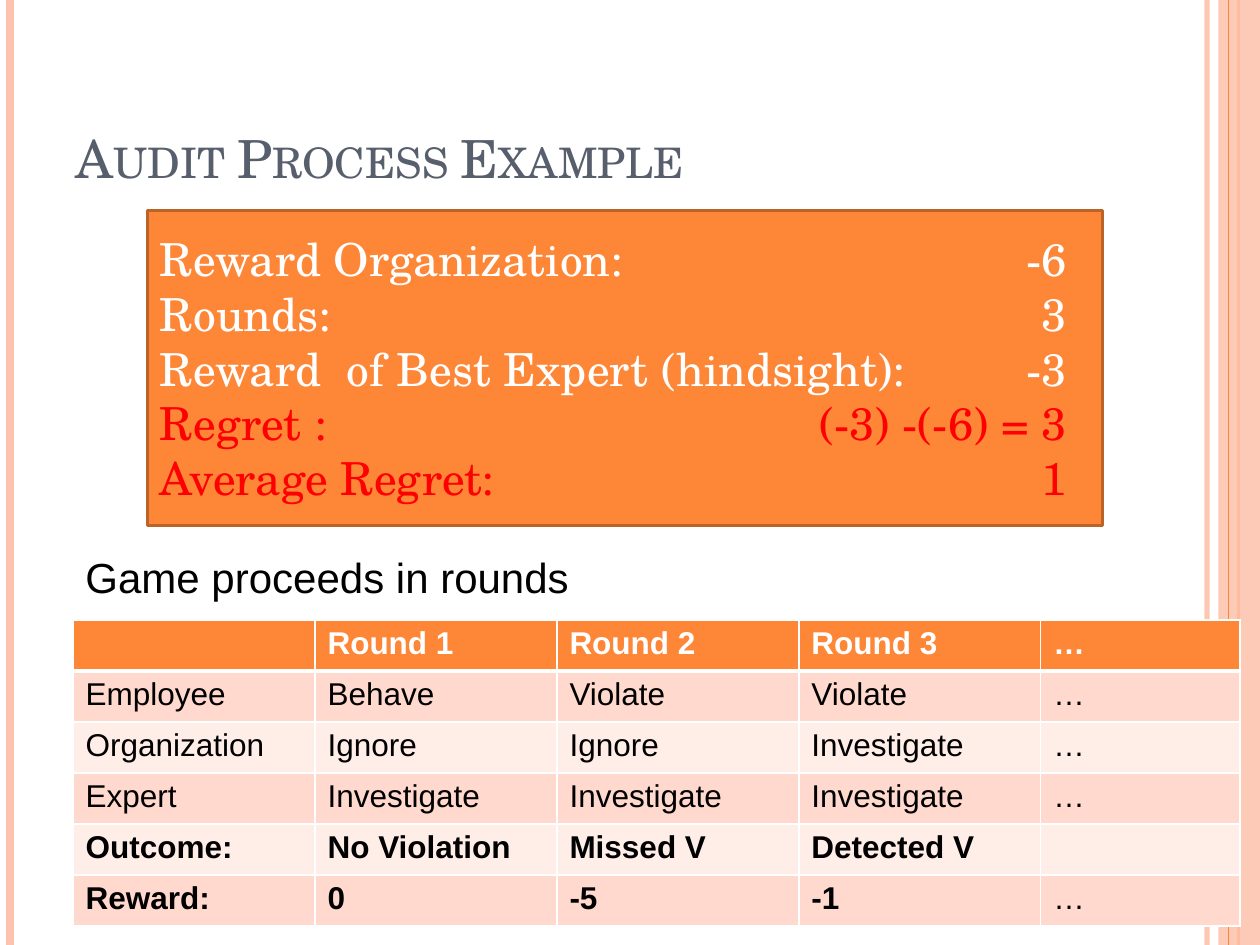
from lxml.etree import SubElement
from pptx import Presentation
from pptx.dml.color import RGBColor
from pptx.enum.shapes import MSO_CONNECTOR, MSO_SHAPE
from pptx.enum.text import MSO_ANCHOR, MSO_AUTO_SIZE, PP_ALIGN
from pptx.oxml.ns import qn
from pptx.util import Inches, Pt

ORANGE = RGBColor(0xFE, 0x86, 0x37)
DARK_ORANGE = RGBColor(0xBC, 0x63, 0x29)
PEACH = RGBColor(0xFE, 0xC3, 0xAE)
BAND_DARK = RGBColor(0xFF, 0xD9, 0xCE)
BAND_LIGHT = RGBColor(0xFF, 0xED, 0xE8)
SLATE = RGBColor(0x57, 0x5F, 0x6D)
WHITE = RGBColor(0xFF, 0xFF, 0xFF)
BLACK = RGBColor(0, 0, 0)
RED = RGBColor(0xFF, 0, 0)

SERIF, SANS = "TeX Gyre Schola", "Arial"

# x, colour, width in points, opacity in percent
RULES = [
    (9.58, PEACH, 3, 93),
    (0.08, PEACH, 4.5, 100),
    (9.83, ORANGE, 1.5, 100),
    (9.75, ORANGE, 0.75, 100),
]
SUMMARY = [
    ("Reward Organization:", "-6", WHITE),
    ("Rounds:", "3", WHITE),
    ("Reward  of Best Expert (hindsight):", "-3", WHITE),
    ("Regret :", "(-3) -(-6) = 3", RED),
    ("Average Regret:", "1", RED),
]
COLUMNS = [
    ["", "Employee", "Organization", "Expert", "Outcome:", "Reward:"],
    ["Round 1", "Behave", "Ignore", "Investigate", "No Violation", "0"],
    ["Round 2", "Violate", "Ignore", "Investigate", "Missed V", "-5"],
    ["Round 3", "Violate", "Investigate", "Investigate", "Detected V", "-1"],
    ["…", "…", "…", "…", "", "…"],
]
COLUMN_WIDTHS = [1.92, 1.92, 1.92, 1.92, 1.58]
BOLD_ROWS = (0, 4, 5)


def write(p, text, font=SANS, size=18, color=BLACK, bold=False, small_caps=False):
    r = p.add_run()
    r.text = text
    r.font.name, r.font.size, r.font.bold = font, Pt(size), bold
    r.font.color.rgb = color
    if small_caps:
        r.font._element.set("cap", "small")


def set_opacity(fill_parent, percent):
    color = fill_parent.find(qn("a:solidFill"))[0]
    SubElement(color, qn("a:alpha"), val=str(percent * 1000))


def set_borders(cell, **widths):
    """Draw white borders; widths in points are keyed L, R, T, B."""
    tc_pr = cell._tc.get_or_add_tcPr()
    for side, width in widths.items():
        ln = SubElement(tc_pr, qn(f"a:ln{side}"), w=str(Pt(width)))
        fill = SubElement(ln, qn("a:solidFill"))
        SubElement(fill, qn("a:srgbClr"), val=str(WHITE))


def add_right_tab(p, position):
    tabs = SubElement(p._p.get_or_add_pPr(), qn("a:tabLst"))
    SubElement(tabs, qn("a:tab"), pos=str(Inches(position)), algn="r")


class SlideBuilder:
    def __init__(self, prs):
        self.prs = prs
        self.s = prs.slides.add_slide(prs.slide_layouts[5])

    def rule(self, x, color, width, opacity):
        line = self.s.shapes.add_connector(
            MSO_CONNECTOR.STRAIGHT, Inches(x), 0, Inches(x), self.prs.slide_height)
        line.line.color.rgb = color
        line.line.width = Pt(width)
        SubElement(line._element.spPr, qn("a:effectLst"))
        if opacity < 100:
            set_opacity(line.line._get_or_add_ln(), opacity)

    def rectangle(self, x, y, w, h, fill, line=None, opacity=100):
        sp = self.s.shapes.add_shape(
            MSO_SHAPE.RECTANGLE, Inches(x), Inches(y), Inches(w), Inches(h))
        sp.shadow.inherit = False
        sp.fill.solid()
        sp.fill.fore_color.rgb = fill
        if line is None:
            sp.line.fill.background()
        else:
            sp.line.color.rgb = line
            sp.line.width = Pt(2)
        if opacity < 100:
            set_opacity(sp._element.spPr, opacity)
        return sp

    def title(self, text, x, y, w, h):
        sp = self.s.shapes.title
        sp.left, sp.top, sp.width, sp.height = map(Inches, (x, y, w, h))
        tf = sp.text_frame
        tf.auto_size = MSO_AUTO_SIZE.NONE
        tf.vertical_anchor = MSO_ANCHOR.BOTTOM
        p = tf.paragraphs[0]
        p.alignment = PP_ALIGN.LEFT
        write(p, text, font=SERIF, size=30, color=SLATE, small_caps=True)

    def text(self, text, x, y, w, h, **style):
        tf = self.s.shapes.add_textbox(
            Inches(x), Inches(y), Inches(w), Inches(h)).text_frame
        tf.word_wrap = True
        tf.auto_size = MSO_AUTO_SIZE.SHAPE_TO_FIT_TEXT
        write(tf.paragraphs[0], text, **style)

    def summary(self, rows, x, y, w, h):
        """Box of labels with values lined up at a right tab."""
        tf = self.rectangle(x, y, w, h, ORANGE, DARK_ORANGE).text_frame
        tf.word_wrap = True
        tf.vertical_anchor = MSO_ANCHOR.MIDDLE
        for i, (label, value, color) in enumerate(rows):
            p = tf.add_paragraph() if i else tf.paragraphs[0]
            p.alignment = PP_ALIGN.LEFT
            add_right_tab(p, 7.2)
            write(p, f"{label}\t{value}", font=SERIF, size=26, color=color)

    def column_table(self, texts, x, y, w, h):
        table = self.s.shapes.add_table(
            len(texts), 1, Inches(x), Inches(y), Inches(w), Inches(h)).table
        for i, text in enumerate(texts):
            cell = table.cell(i, 0)
            header = i == 0
            set_borders(cell, L=1, R=1, T=3 if i == 1 else 1, B=3 if header else 1)
            cell.fill.solid()
            cell.fill.fore_color.rgb = (
                ORANGE if header else BAND_DARK if i % 2 else BAND_LIGHT)
            if text:
                write(cell.text_frame.paragraphs[0], text,
                      color=WHITE if header else BLACK,
                      bold=i in BOLD_ROWS and (header or text != "…"))


def main():
    prs = Presentation()
    prs.slide_width, prs.slide_height = Inches(10), Inches(7.5)
    slide = SlideBuilder(prs)

    for rule in RULES[:3]:
        slide.rule(*rule)
    slide.rectangle(9.67, 0, 0.33, 7.5, PEACH, opacity=87)
    slide.rule(*RULES[3])

    slide.title("Audit Process Example", 0.5, 0.3, 8.17, 1.25)
    slide.text("Game proceeds in rounds", 0.58, 4.33, 6.58, 0.5, size=24)
    x = 0.58
    for texts, width in zip(COLUMNS, COLUMN_WIDTHS):
        slide.column_table(texts, x, 4.92, width, 2.43)
        x += width
    slide.summary(SUMMARY, 1.17, 1.67, 7.58, 2.5)

    prs.save("out.pptx")


if __name__ == "__main__":
    main()
